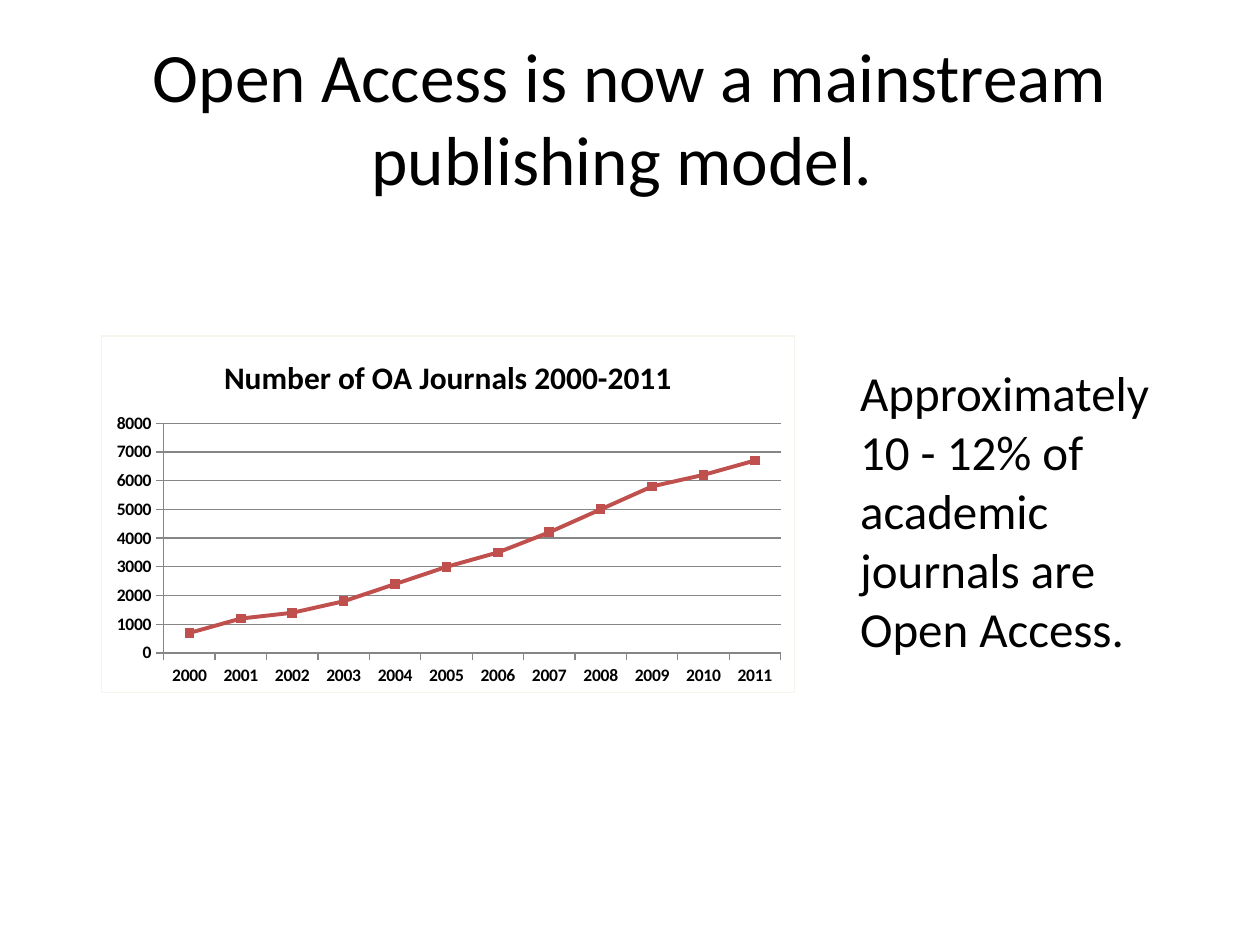
import pptx
import pptx.chart.data
import pptx.dml.color
import pptx.enum.chart
import pptx.enum.text
import pptx.oxml
import pptx.oxml.ns
import pptx.util
from pptx.util import Cm, Pt

TITLE = "Open Access is now a mainstream publishing model. "
REMARK = "Approximately 10 - 12% of academic journals are Open Access."
CHART_TITLE = "Number of OA Journals 2000-2011"
FIRST_YEAR = 2000
JOURNALS = [700, 1200, 1400, 1800, 2400, 3000, 3500, 4200, 5000, 5800, 6200, 6700]

THEME = {
    "font": "Calibri",
    "text": "000000", "series": "C0504D", "grid": "868686", "border": "F5F4ED",
    "title_size": 39.6, "remark_size": 28, "chart_title_size": 18, "axis_size": 10,
}
# left, top, width, height
TITLE_BOX = (Cm(1.27), Cm(0.76), Cm(22.86), Cm(3.18))
CHART_BOX = (Cm(2.03), Cm(6.76), Cm(14), Cm(7.21))
REMARK_BOX = (Cm(17.09), Cm(7.19), Cm(7.24), Cm(6.25))
PLOT_AREA = {"x": 0.09, "y": 0.245, "w": 0.89, "h": 0.645}  # fractions of the chart


def color(name):
    return pptx.dml.color.RGBColor.from_string(THEME[name])


def style_font(font, size_name, bold=False):
    font.name = THEME["font"]
    font.size = Pt(THEME[size_name])
    font.bold = bold
    font.color.rgb = color("text")


def style_line(line, color_name, width):
    line.color.rgb = color(color_name)
    line.width = Pt(width)


def add_run(paragraph, text, size_name, bold=False):
    run = paragraph.add_run()
    run.text = text
    style_font(run.font, size_name, bold)


def frame_chart(chart):
    """Give the chart its outer border and fix the inner plot area."""
    namespaces = pptx.oxml.ns.nsdecls("c", "a")
    border = pptx.oxml.parse_xml(
        f'<c:spPr {namespaces}><a:solidFill><a:srgbClr val="FFFFFF"/></a:solidFill>'
        f'<a:ln w="{Pt(0.75)}"><a:solidFill><a:srgbClr val="{THEME["border"]}"/>'
        "</a:solidFill></a:ln></c:spPr>")
    chart_element = chart.element.find(pptx.oxml.ns.qn("c:chart"))
    chart_element.addnext(border)

    plot_area = chart_element.find(pptx.oxml.ns.qn("c:plotArea"))
    for old_layout in plot_area.findall(pptx.oxml.ns.qn("c:layout")):
        plot_area.remove(old_layout)
    fractions = "".join(f'<c:{key} val="{value}"/>' for key, value in PLOT_AREA.items())
    plot_area.insert(0, pptx.oxml.parse_xml(
        f'<c:layout {namespaces}><c:manualLayout><c:layoutTarget val="inner"/>'
        f'<c:xMode val="edge"/><c:yMode val="edge"/>{fractions}'
        "</c:manualLayout></c:layout>"))


def add_journal_chart(slide):
    data = pptx.chart.data.CategoryChartData()
    data.categories = [str(FIRST_YEAR + index) for index in range(len(JOURNALS))]
    data.add_series(CHART_TITLE, JOURNALS)
    chart = slide.shapes.add_chart(
        pptx.enum.chart.XL_CHART_TYPE.LINE_MARKERS, *CHART_BOX, data).chart
    style_font(chart.font, "axis_size")
    chart.has_legend = False
    chart.has_title = True
    add_run(chart.chart_title.text_frame.paragraphs[0], CHART_TITLE,
            "chart_title_size", bold=True)
    chart.chart_title.include_in_layout = False

    for axis in (chart.category_axis, chart.value_axis):
        style_font(axis.tick_labels.font, "axis_size", bold=True)
        axis.major_tick_mark = pptx.enum.chart.XL_TICK_MARK.OUTSIDE
        axis.minor_tick_mark = pptx.enum.chart.XL_TICK_MARK.NONE
        style_line(axis.format.line, "grid", 0.75)
    chart.value_axis.minimum_scale = 0
    chart.value_axis.maximum_scale = 8000
    chart.value_axis.major_unit = 1000
    chart.value_axis.has_major_gridlines = True
    style_line(chart.value_axis.major_gridlines.format.line, "grid", 0.75)

    plot = chart.plots[0]
    plot.vary_by_categories = False
    series = plot.series[0]
    series.smooth = False
    style_line(series.format.line, "series", 2.25)
    series.marker.style = pptx.enum.chart.XL_MARKER_STYLE.SQUARE
    series.marker.size = 5
    series.marker.format.fill.solid()
    series.marker.format.fill.fore_color.rgb = color("series")
    style_line(series.marker.format.line, "series", 0.75)
    frame_chart(chart)


def main():
    presentation = pptx.Presentation()
    presentation.slide_width, presentation.slide_height = Cm(25.4), Cm(19.05)
    slide = presentation.slides.add_slide(presentation.slide_layouts[5])

    title = slide.shapes.title
    title.left, title.top, title.width, title.height = TITLE_BOX
    title.text_frame.vertical_anchor = pptx.enum.text.MSO_ANCHOR.MIDDLE
    title_paragraph = title.text_frame.paragraphs[0]
    title_paragraph.alignment = pptx.enum.text.PP_ALIGN.CENTER
    add_run(title_paragraph, TITLE, "title_size")

    add_journal_chart(slide)

    remark = slide.shapes.add_textbox(*REMARK_BOX).text_frame
    remark.word_wrap = True
    remark.auto_size = pptx.enum.text.MSO_AUTO_SIZE.SHAPE_TO_FIT_TEXT
    add_run(remark.paragraphs[0], REMARK, "remark_size")

    presentation.save("out.pptx")


if __name__ == "__main__":
    main()
